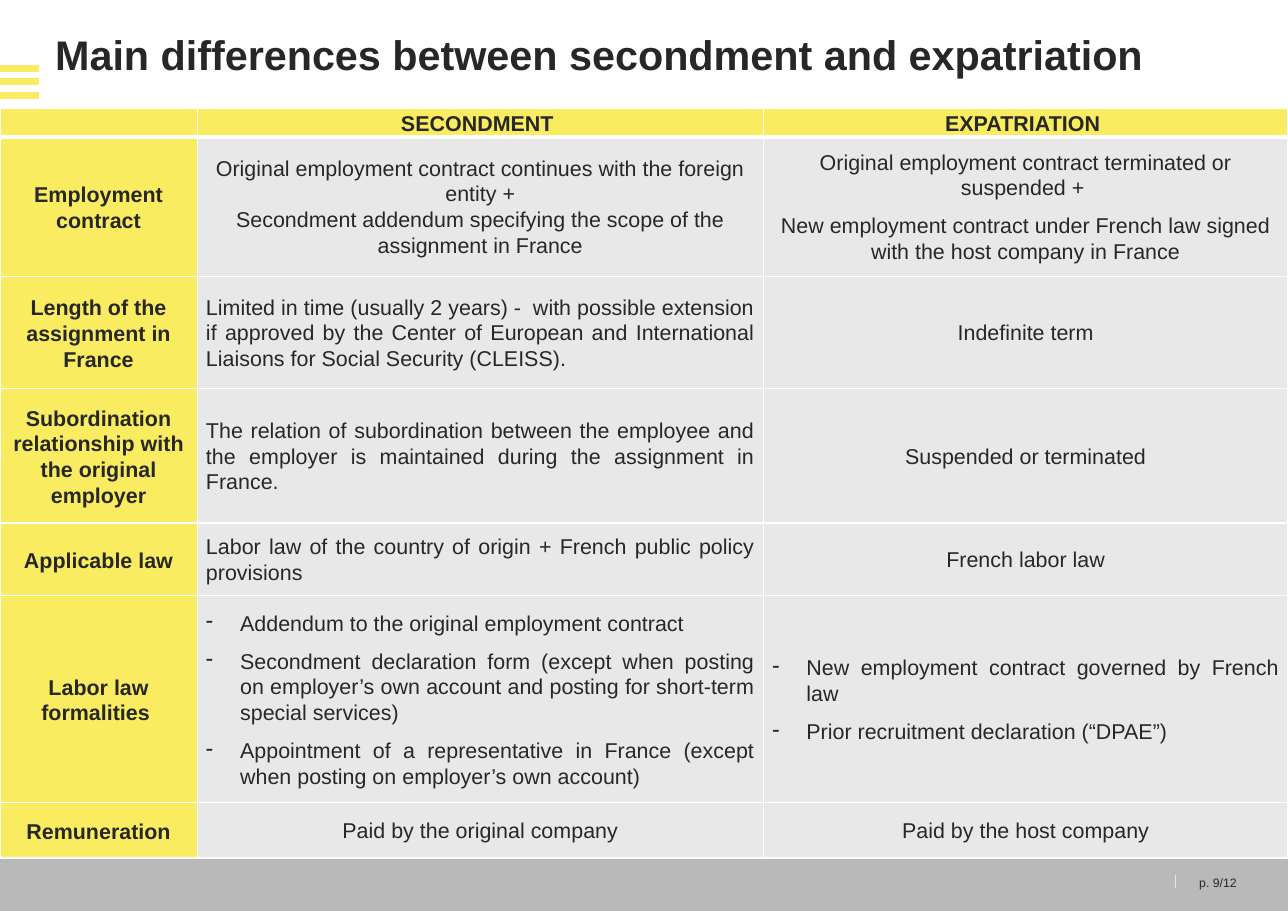
from lxml.etree import SubElement
from pptx import Presentation
from pptx.dml.color import RGBColor
from pptx.enum.shapes import MSO_CONNECTOR, MSO_SHAPE
from pptx.enum.text import MSO_ANCHOR as Anchor, PP_ALIGN as Align
from pptx.oxml import parse_xml
from pptx.oxml.ns import nsdecls, qn
from pptx.util import Pt

PX = 9144  # 100 px to the inch
WIDTH, HEIGHT = 1169, 827
FONT = "Arial"
INK, YELLOW, PALE, GREY, WHITE = "272726", "F9EC60", "E8E8E8", "B9B9B9", "FFFFFF"
DIVIDER = "E6E6E6"

COLUMNS = [179, 514, 476]
ROW_HEIGHTS = [22, 122, 102, 122, 56, 168, 50]
LABEL_INSETS = (1, 1, 1, 0)
BODY_INSETS = (8, 8, 8, 8)
HANGING = 31

CENTER = dict(align=Align.CENTER)
JUSTIFIED = dict(align=Align.JUSTIFY)
DASHED = dict(align=Align.JUSTIFY, bullet="-")

# label, (secondment paragraphs, format), (expatriation paragraphs, format)
COMPARISON = [
    ("Employment contract",
     (["Original employment contract continues with the foreign entity +\v"
       "Secondment addendum specifying the scope of the assignment in France"], CENTER),
     (["Original employment contract terminated or suspended + ",
       "New employment contract under French law signed with the host company in France"],
      CENTER)),
    ("Length of the assignment in France",
     (["Limited in time (usually 2 years) -  with possible extension if approved by the "
       "Center of European and International Liaisons for Social Security (CLEISS)."],
      JUSTIFIED),
     (["Indefinite term"], CENTER)),
    ("Subordination relationship with the original employer",
     (["The relation of subordination between the employee and the employer is maintained "
       "during the assignment in France."], JUSTIFIED),
     (["Suspended or terminated"], CENTER)),
    ("Applicable law",
     (["Labor law of the country of origin + French public policy provisions "], JUSTIFIED),
     (["French labor law"], CENTER)),
    ("Labor law formalities ",
     (["Addendum to the original employment contract",
       "Secondment declaration form (except when posting on employer’s own account and "
       "posting for short-term special services)",
       "Appointment of a representative in France (except when posting on employer’s own "
       "account) "], DASHED),
     (["New employment contract governed by French law",
       "Prior recruitment declaration (“DPAE”)"], DASHED)),
    ("Remuneration",
     (["Paid by the original company"], CENTER),
     (["Paid by the host company"], CENTER)),
]


def color(value):
    return RGBColor.from_string(value)


def write(frame, lines, size=14, bold=False, align=Align.LEFT, spacing=1.0, after=0,
          bullet=None):
    """Fill a text frame with one paragraph per line."""
    for index, line in enumerate(lines):
        para = frame.paragraphs[0] if index == 0 else frame.add_paragraph()
        para.text = line
        if bullet:
            properties = para._p.get_or_add_pPr()
            properties.set("marL", str(HANGING * PX))
            properties.set("indent", str(-HANGING * PX))
            SubElement(properties, qn("a:buChar"), char=bullet)
        para.alignment = align
        para.line_spacing = spacing
        para.space_before, para.space_after = Pt(0), Pt(after)
        for font in [para.font] + [span.font for span in para.runs]:
            font.name, font.size, font.bold = FONT, Pt(size), bold
            font.color.rgb = color(INK)


def set_insets(target, insets):
    (target.margin_left, target.margin_top,
     target.margin_right, target.margin_bottom) = [inset * PX for inset in insets]


def add_text(page, box, line, anchor=Anchor.MIDDLE, **style):
    frame = page.shapes.add_textbox(*[side * PX for side in box]).text_frame
    frame.word_wrap = True
    frame.vertical_anchor = anchor
    set_insets(frame, (0, 0, 0, 0))
    write(frame, [line], **style)


def add_line(page, start, end, stroke, weight):
    ends = [value * PX for value in start + end]
    line = page.shapes.add_connector(MSO_CONNECTOR.STRAIGHT, *ends)
    line.line.color.rgb = color(stroke)
    line.line.width = Pt(weight)
    SubElement(line._element.spPr, qn("a:effectLst"))


def set_borders(cell, top=1, bottom=1):
    weights = [("lnL", 1), ("lnR", 1), ("lnT", top), ("lnB", bottom)]
    for place, (side, weight) in enumerate(weights):
        cell._tc.get_or_add_tcPr().insert(place, parse_xml(
            f'<a:{side} {nsdecls("a")} w="{Pt(weight)}"><a:solidFill>'
            f'<a:srgbClr val="{WHITE}"/></a:solidFill></a:{side}>'))


def fill_cell(cell, lines, fill, insets, **style):
    cell.fill.solid()
    cell.fill.fore_color.rgb = color(fill)
    cell.vertical_anchor = Anchor.MIDDLE
    set_insets(cell, insets)
    write(cell.text_frame, lines, spacing=1.07, after=8, **style)


def draw_heading(page, box):
    left, top, width, height = box
    for step in range(3):
        y = top + 62 + round(step * 12.5)
        add_line(page, (left + 35, y), (left, y), YELLOW, 4.5)
    add_text(page, (left + 50, top + 32, width - 101, height - 50),
             "Main differences between secondment and expatriation",
             anchor=Anchor.TOP, size=27, bold=True, spacing=0.9)


def draw_comparison(page, box):
    frame = page.shapes.add_table(len(ROW_HEIGHTS), len(COLUMNS),
                                  *[side * PX for side in box])
    table = frame.table
    table.first_row = table.horz_banding = False
    for column, width in zip(table.columns, COLUMNS):
        column.width = width * PX
    for row, height in zip(table.rows, ROW_HEIGHTS):
        row.height = height * PX

    label = dict(fill=YELLOW, insets=LABEL_INSETS, bold=True, **CENTER)
    for index, heading in enumerate(["", "SECONDMENT ", "EXPATRIATION "]):
        cell = table.cell(0, index)
        fill_cell(cell, [heading], **label)
        set_borders(cell, bottom=3)
    for index, (name, *entries) in enumerate(COMPARISON, start=1):
        cells = table.rows[index].cells
        fill_cell(cells[0], [name], **label)
        for place, (lines, style) in enumerate(entries, start=1):
            fill_cell(cells[place], lines, PALE, BODY_INSETS, **style)
        for cell in cells:
            set_borders(cell, top=3 if index == 1 else 1)


def draw_footer(page, box):
    left, top, width, height = box
    band = page.shapes.add_shape(MSO_SHAPE.RECTANGLE, *[side * PX for side in box])
    band.shadow.inherit = False
    band.fill.solid()
    band.fill.fore_color.rgb = color(GREY)
    band.line.fill.background()
    right = left + width
    add_line(page, (right - 102, top + 27), (right - 102, top + 39), DIVIDER, 0.75)
    add_text(page, (right - 100, top + 20, 38, 28), "p. 9", size=8, align=Align.RIGHT)
    add_text(page, (right - 62, top + 20, 38, 28), "/12", size=8)


def main():
    deck = Presentation()
    deck.slide_width, deck.slide_height = WIDTH * PX, HEIGHT * PX
    page = deck.slides.add_slide(deck.slide_layouts[6])
    draw_footer(page, (0, 767, WIDTH, 60))
    draw_heading(page, (0, 0, WIDTH, 98))
    draw_comparison(page, (0, 98, WIDTH, sum(ROW_HEIGHTS)))
    deck.save("out.pptx")


if __name__ == "__main__":
    main()
